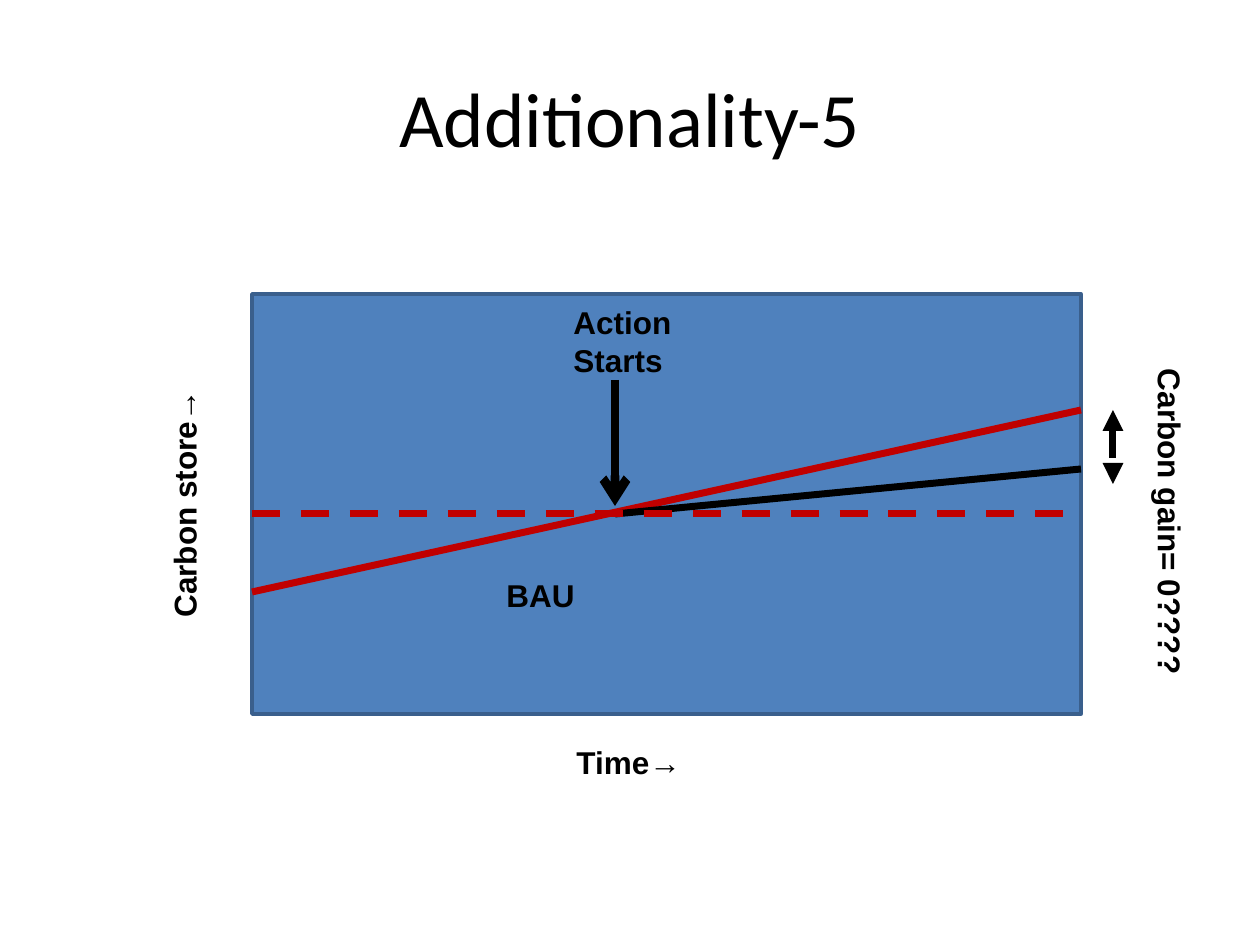
from dataclasses import dataclass

from lxml.etree import SubElement
from pptx import Presentation
from pptx.dml.color import RGBColor
from pptx.enum.dml import MSO_LINE
from pptx.enum.shapes import MSO_CONNECTOR, MSO_SHAPE
from pptx.enum.text import MSO_ANCHOR, MSO_AUTO_SIZE, PP_ALIGN
from pptx.oxml.ns import qn
from pptx.util import Pt


@dataclass(frozen=True)
class Theme:
    black: str = "000000"
    red: str = "C00000"
    blue: str = "4F81BD"
    edge: str = "3A5F8C"
    head: str = "Calibri"
    body: str = "Arial"
    big: int = 44
    small: int = 18


def px(*nums):
    return [round(n * 914400 / 126) for n in nums]


class Board:
    def __init__(self, slide, theme):
        self.slide = slide
        self.theme = theme

    def frame(self, box):
        """Add text box and return it with its text frame."""
        shape = self.slide.shapes.add_textbox(*px(*box))
        return shape, shape.text_frame

    def letter(self, frame, text, font, size, bold=False, align=None):
        frame.text = text
        for para in frame.paragraphs:
            para.alignment = align
            para.font.name = font
            para.font.size = Pt(size)
            para.font.bold = bold
            para.font.color.rgb = RGBColor.from_string(self.theme.black)

    def title(self, text, box):
        _, frame = self.frame(box)
        frame.word_wrap = True
        frame.vertical_anchor = MSO_ANCHOR.MIDDLE
        self.letter(frame, text, self.theme.head, self.theme.big,
                    align=PP_ALIGN.CENTER)

    def label(self, text, box, turn=0):
        shape, frame = self.frame(box)
        shape.rotation = turn
        frame.word_wrap = False
        frame.auto_size = MSO_AUTO_SIZE.SHAPE_TO_FIT_TEXT
        self.letter(frame, text, self.theme.body, self.theme.small, bold=True)

    def panel(self, box):
        shape = self.slide.shapes.add_shape(MSO_SHAPE.RECTANGLE, *px(*box))
        shape.shadow.inherit = False
        shape.fill.solid()
        shape.fill.fore_color.rgb = RGBColor.from_string(self.theme.blue)
        shape.line.color.rgb = RGBColor.from_string(self.theme.edge)
        shape.line.width = Pt(2)

    def line(self, start, end, color, width=4, dash=False, head=None, tail=None):
        link = self.slide.shapes.add_connector(
            MSO_CONNECTOR.STRAIGHT, *px(*start, *end))
        link.line.color.rgb = RGBColor.from_string(color)
        link.line.width = Pt(width)
        if dash:
            link.line.dash_style = MSO_LINE.DASH
        props = link._element.spPr
        for tag, kind in (("a:headEnd", head), ("a:tailEnd", tail)):
            if kind:
                SubElement(props.find(qn("a:ln")), qn(tag), type=kind)
        SubElement(props, qn("a:effectLst"))


def main():
    deck = Presentation()
    deck.slide_width, deck.slide_height = px(1260, 945)
    theme = Theme()
    board = Board(deck.slides.add_slide(deck.slide_layouts[6]), theme)

    # Plot area: edges, moment of action and levels
    left, top, wide, high = 252, 294, 829, 420
    right = left + wide
    act, base, peak = 615, 514, 410

    # Title, panel and axis names
    board.title("Additionality-5", (63, 38, 1134, 158))
    board.panel((left, top, wide, high))
    board.label("Time→", (564, 737, 130, 50))
    board.label("Carbon store→", (57, 478, 254, 50), turn=270)

    # Trend lines
    board.line((left, 592), (right, peak), theme.red)
    board.label("BAU", (494, 570, 94, 50))
    board.line((act, base), (right, 469), theme.black)

    # Gain and action arrows
    board.line((1113, peak), (1113, 484), theme.black, dash=True,
               head="triangle", tail="triangle")
    board.line((act, 380), (act, 506), theme.black, width=5, tail="arrow")
    board.label("Action\nStarts", (561, 297, 134, 89))
    board.label("Carbon gain= 0????", (1003, 499, 335, 50), turn=90)

    # Base level
    board.line((left, base), (right, base), theme.red, dash=True)

    deck.save("out.pptx")


if __name__ == "__main__":
    main()
